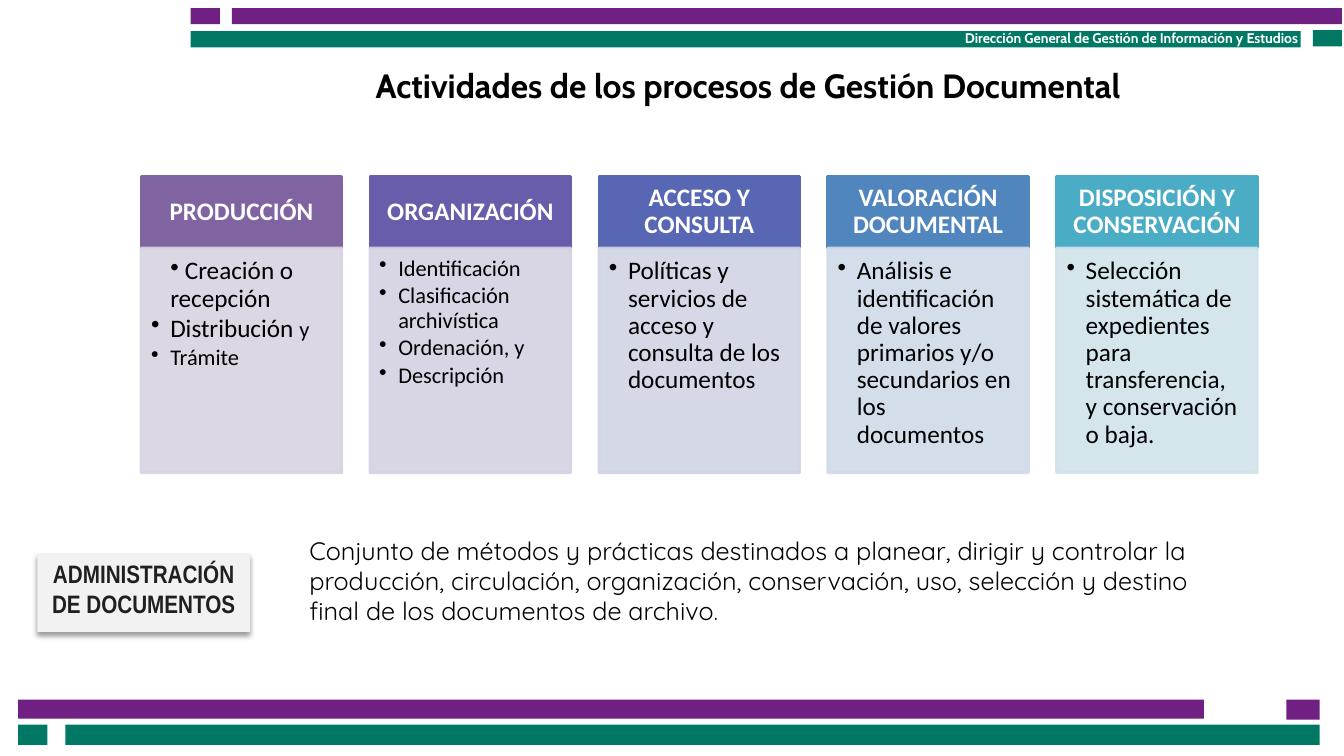
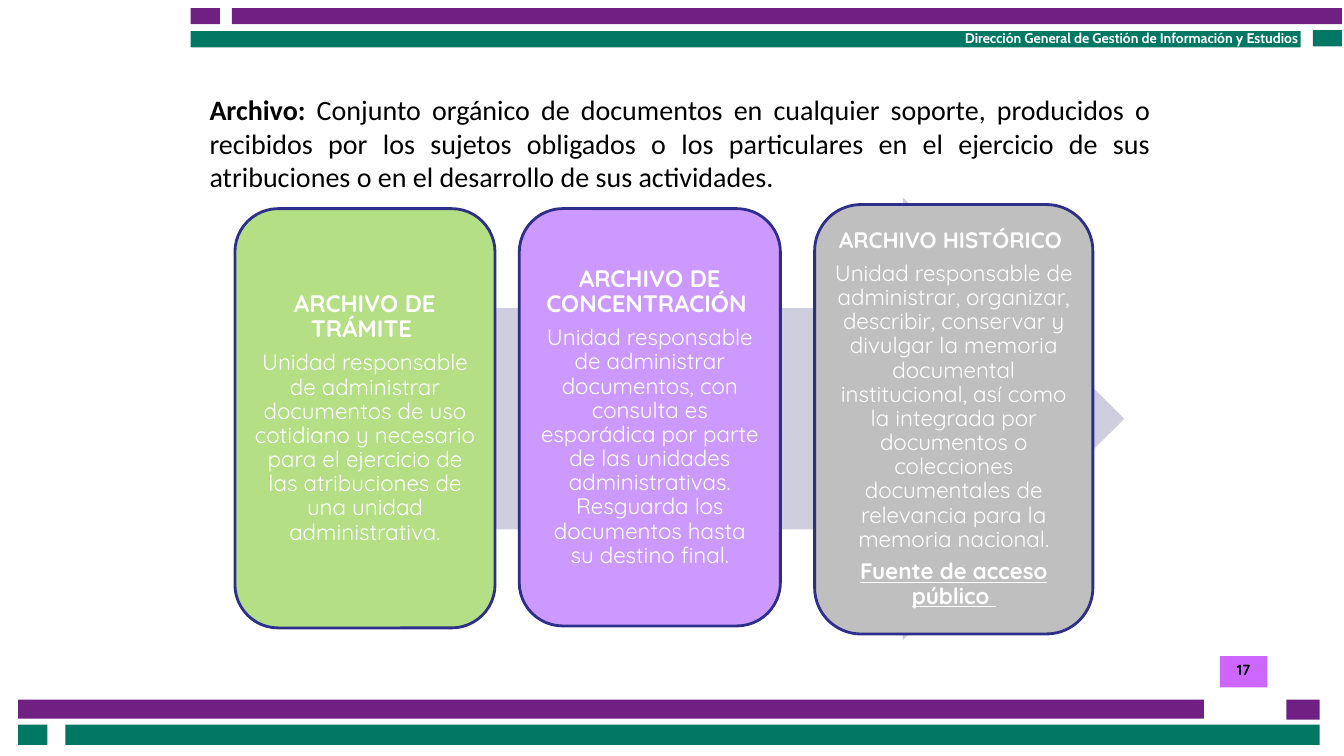
"""Build two slides on document management and the kinds of archive."""
from dataclasses import dataclass
from typing import NamedTuple

from lxml import etree
from pptx import Presentation
from pptx.dml.color import RGBColor
from pptx.enum.shapes import MSO_SHAPE
from pptx.enum.text import MSO_ANCHOR, PP_ALIGN
from pptx.oxml.ns import qn
from pptx.util import Inches, Pt

RECT, ROUND, ARROW = MSO_SHAPE.RECTANGLE, MSO_SHAPE.ROUNDED_RECTANGLE, MSO_SHAPE.RIGHT_ARROW
TOP, MID = MSO_ANCHOR.TOP, MSO_ANCHOR.MIDDLE
LEFT, RIGHT = PP_ALIGN.LEFT, PP_ALIGN.RIGHT
CENTER, FULL = PP_ALIGN.CENTER, PP_ALIGN.JUSTIFY


@dataclass(frozen=True)
class Theme:
    plum: str = "702082"
    green: str = "007864"
    black: str = "000000"
    white: str = "FFFFFF"
    ink: str = "202020"
    label: str = "F2F2F2"
    badge: str = "CC66FF"
    arrow: str = "CECEDE"
    edge: str = "2E2E8B"
    title: float = 24
    lead: float = 20
    text: float = 18
    head: float = 17
    small: float = 16
    page: float = 10.5
    note: float = 10
    main: str = "Calibri"
    soft: str = "Quicksand"
    show: str = "Cabin"
    thin: str = "Arial Narrow"


T = Theme()


class Box(NamedTuple):
    x: float
    y: float
    w: float
    h: float


class Run(NamedTuple):
    text: str
    size: float = T.text
    bold: bool = False
    line: bool = False


class Item(NamedTuple):
    runs: list[Run]
    hang: float = 0.19


class Step(NamedTuple):
    name: str
    dark: str
    pale: str
    items: list[Item]
    inset: tuple = (0.1, 0.1, 0.14, 0.16)


class Card(NamedTuple):
    box: Box
    fill: str
    inset: float
    paras: list[Item]


BANDS = [
    (Box(12.76, 6.94, 0.33, 0.2), T.plum),
    (Box(0.18, 6.94, 11.76, 0.19), T.plum),
    (Box(0.18, 7.19, 0.29, 0.2), T.green),
    (Box(0.65, 7.19, 12.44, 0.2), T.green),
    (Box(1.89, 0.08, 0.29, 0.16), T.plum),
    (Box(2.3, 0.08, 11.01, 0.16), T.plum),
    (Box(13.02, 0.3, 0.29, 0.16), T.green),
    (Box(1.89, 0.31, 11.01, 0.16), T.green),
]


def line(text: str, size: float = T.text, bold: bool = False, under: bool = False) -> Item:
    """Return a paragraph with a single run."""
    return Item([Run(text, size, bold, under)])


STEPS = [
    Step("PRODUCCIÓN", "8064A2", "D8D3E0", [
        Item([Run(" Creación o recepción")], 0),
        Item([Run("Distribución "), Run("y", T.small)]),
        line("Trámite", T.small),
    ]),
    Step("ORGANIZACIÓN", "685DAB", "D4D2E3", [
        line(name, T.small) for name in (
            "Identificación", "Clasificación archivística", "Ordenación, y", "Descripción")
    ], (0.09, 0.09, 0.12, 0.14)),
    Step("ACCESO Y CONSULTA", "5767B4", "D1D4E5", [
        line("Políticas y servicios de acceso y consulta de los documentos")]),
    Step("VALORACIÓN DOCUMENTAL", "5185BD", "D0DBE8", [
        line("Análisis e identificación de valores primarios y/o secundarios en los documentos")]),
    Step("DISPOSICIÓN Y CONSERVACIÓN", "4BACC6", "D0E3EA", [
        line("Selección sistemática de expedientes para transferencia, y conservación o baja.")],
        (0.1, 0.1, 0.17, 0.16)),
]

CARDS = [
    Card(Box(2.33, 2.07, 2.58, 4.16), "B4DF85", 0.07, [
        line("ARCHIVO DE TRÁMITE ", T.head, True),
        line("Unidad responsable de administrar documentos de uso cotidiano y necesario "
             "para el ejercicio de las atribuciones de una unidad administrativa.", T.small),
    ]),
    Card(Box(5.15, 2.07, 2.59, 4.14), "CC99FF", 0.08, [
        line("ARCHIVO DE CONCENTRACIÓN ", T.head, True),
        line("Unidad responsable de administrar documentos, con consulta es esporádica por "
             "parte de las unidades administrativas. Resguarda los documentos hasta su "
             "destino final.", T.small),
    ]),
    Card(Box(8.08, 2.03, 2.76, 4.26), "BFBFBF", 0.05, [
        line("ARCHIVO HISTÓRICO ", T.small, True),
        line("Unidad responsable de administrar, organizar, describir, conservar y divulgar "
             "la memoria documental institucional, así como la integrada por documentos o "
             "colecciones documentales de relevancia para la memoria nacional.", T.small),
        line("Fuente de acceso público ", T.small, True, True),
    ]),
]


def draw(slide, box: Box, fill: str, *, kind=RECT, edge: str = "", alpha: int = 100):
    """Add a flat preset shape."""
    shape = slide.shapes.add_shape(kind, *map(Inches, box))
    shape.shadow.inherit = False
    shape.fill.solid()
    shape.fill.fore_color.rgb = RGBColor.from_string(fill)
    if edge:
        shape.line.color.rgb = RGBColor.from_string(edge)
        shape.line.width = Pt(2)
    else:
        shape.line.fill.background()
    if alpha < 100:
        for tint in shape._element.spPr.iter(qn("a:srgbClr")):
            etree.SubElement(tint, qn("a:alpha"), val=str(alpha * 1000))
    return shape


def field(slide, box: Box):
    """Add an empty text box."""
    return slide.shapes.add_textbox(*map(Inches, box))


def write(shape, paras: list[Item], *, font: str = T.main, color: str = T.black,
          align=LEFT, anchor=TOP, inset: tuple = (0.1, 0.05, 0.1, 0.05),
          space: float = 1, after: float = 0, dots: bool = False) -> None:
    """Fill a shape with formatted paragraphs."""
    frame = shape.text_frame
    frame.word_wrap = True
    frame.vertical_anchor = anchor
    (frame.margin_left, frame.margin_top,
     frame.margin_right, frame.margin_bottom) = map(Inches, inset)
    for spot, item in enumerate(paras):
        para = frame.add_paragraph() if spot else frame.paragraphs[0]
        if dots:
            props = para._p.get_or_add_pPr()
            props.set("marL", str(Inches(0.19)))
            props.set("indent", str(-Inches(item.hang)))
            etree.SubElement(props, qn("a:buChar"), char="•")
        para.alignment = align
        para.line_spacing = space
        para.space_after = Pt(after)
        for part in item.runs:
            run = para.add_run()
            run.text = part.text
            run.font.name = font
            run.font.size = Pt(part.size)
            run.font.bold = part.bold
            run.font.underline = part.line
            run.font.color.rgb = RGBColor.from_string(color)


def shade(shape) -> None:
    """Put a soft shadow below a shape."""
    group = shape._element.spPr.find(qn("a:effectLst"))
    outer = etree.SubElement(group, qn("a:outerShdw"), blurRad=str(Pt(4)),
                             dist=str(Pt(3)), dir="5400000", rotWithShape="0")
    tint = etree.SubElement(outer, qn("a:srgbClr"), val=T.black)
    etree.SubElement(tint, qn("a:alpha"), val="40000")


def start(deck):
    """Add a blank slide with the shared bands and header."""
    slide = deck.slides.add_slide(deck.slide_layouts[6])
    for box, fill in BANDS:
        draw(slide, box, fill)
    write(field(slide, Box(8.3, 0.24, 4.67, 0.27)),
          [line("Dirección General de Gestión de Información y Estudios", T.note, True)],
          font=T.show, color=T.white, align=RIGHT)
    return slide


def tasks(deck) -> None:
    """Build the slide of the five processes."""
    slide = start(deck)
    write(field(slide, Box(3.6, 0.65, 7.64, 0.39)),
          [line("Actividades de los procesos de Gestión Documental", T.title, True)],
          font=T.show, align=CENTER, anchor=MID)
    for spot, step in enumerate(STEPS):
        left = 1.4 + 2.27 * spot
        head = draw(slide, Box(left, 1.75, 1.99, 0.71), step.dark, edge=step.dark)
        write(head, [line(step.name, bold=True)], color=T.white, align=CENTER,
              anchor=MID, inset=(0.14, 0.08, 0.14, 0.08), space=0.9)
        body = draw(slide, Box(left, 2.46, 1.99, 2.23), step.pale, edge=step.pale, alpha=90)
        write(body, step.items, inset=step.inset, space=0.9, after=2.5, dots=True)
    write(field(slide, Box(2.97, 5.26, 9.37, 1.01)), [Item([
        Run("Conjunto de métodos y prácticas destinados a planear, dirigir y controlar la "
            "producción, circulación, organización, conservación, uso, selección y destino "
            "final de los documentos de archivo"), Run(".", T.small)])], font=T.soft)
    label = draw(slide, Box(0.37, 5.49, 2.11, 0.78), T.label)
    shade(label)
    write(label, [line("ADMINISTRACIÓN DE DOCUMENTOS", bold=True)],
          font=T.thin, color=T.ink, align=CENTER)


def kinds(deck) -> None:
    """Build the slide of the three archives."""
    slide = start(deck)
    badge = draw(slide, Box(12.1, 6.51, 0.47, 0.31), T.badge)
    write(badge, [line("17", T.page, True)], font=T.soft, align=CENTER)
    draw(slide, Box(2.33, 1.96, 8.82, 4.39), T.arrow, kind=ARROW)
    for card in CARDS:
        shape = draw(slide, card.box, card.fill, kind=ROUND, edge=T.edge)
        write(shape, card.paras, font=T.soft, color=T.white, align=CENTER, anchor=MID,
              inset=(card.inset,) * 4, space=0.9, after=6)
    write(field(slide, Box(1.98, 0.87, 9.53, 1.11)), [Item([
        Run("Archivo: ", T.lead, True),
        Run("Conjunto orgánico de documentos en cualquier soporte, producidos o recibidos por "
            "los sujetos obligados o los particulares en el ejercicio de sus atribuciones o "
            "en el desarrollo de sus actividades.", T.lead)])], align=FULL)


def main() -> None:
    """Build and save the deck."""
    deck = Presentation()
    deck.slide_width, deck.slide_height = Inches(13.33), Inches(7.5)
    tasks(deck)
    kinds(deck)
    deck.save("out.pptx")


if __name__ == "__main__":
    main()
